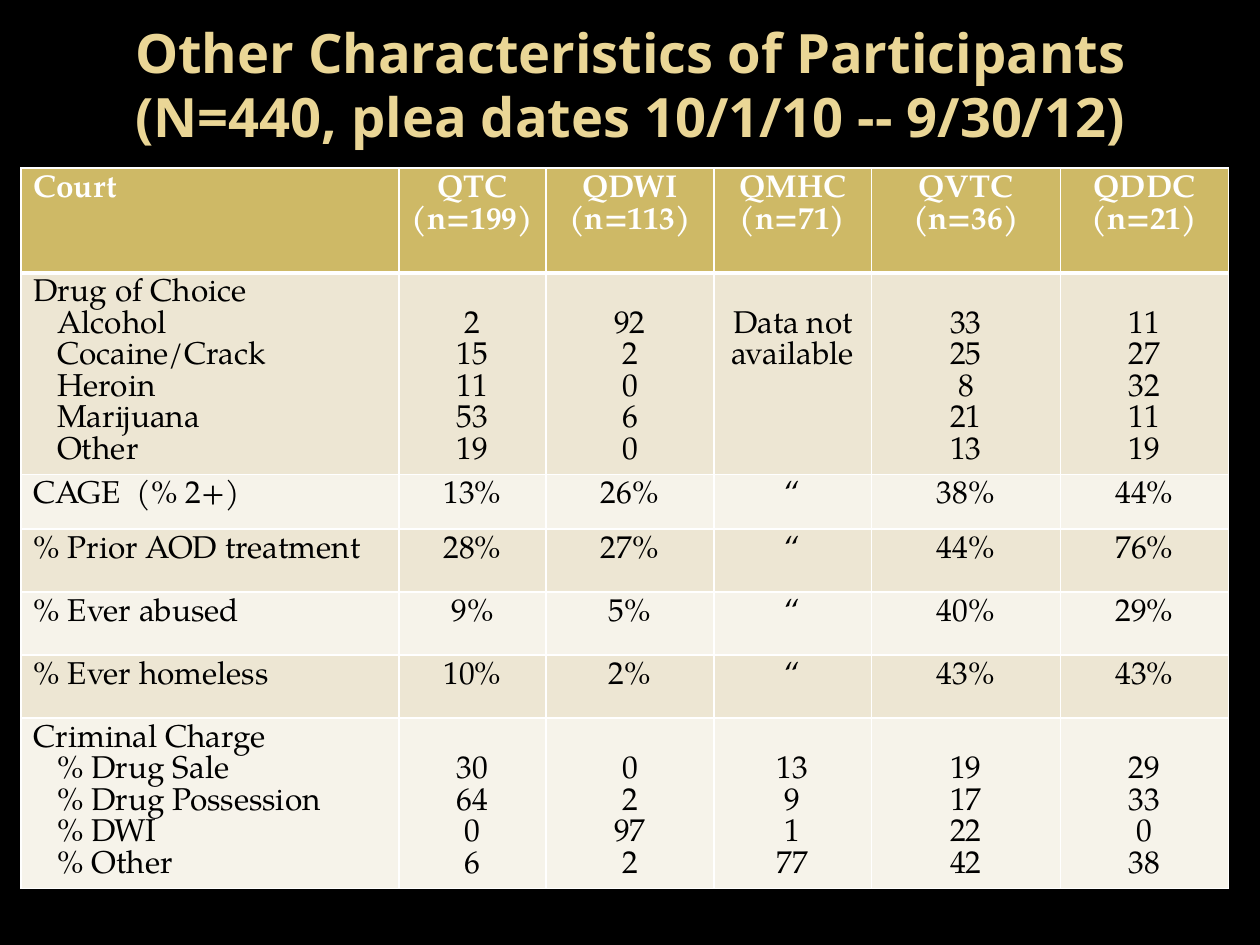
"""Builds a slide with a table of participant characteristics by court."""
import pptx
import pptx.dml.color
import pptx.enum.text
import pptx.oxml
import pptx.oxml.ns
import pptx.util

Pt = pptx.util.Pt
RGBColor = pptx.dml.color.RGBColor
PP_ALIGN = pptx.enum.text.PP_ALIGN

BLACK = RGBColor(0x00, 0x00, 0x00)
WHITE = RGBColor(0xFF, 0xFF, 0xFF)
TITLE_GOLD = RGBColor(0xEA, 0xD6, 0x96)
HEADER_GOLD = RGBColor(0xCE, 0xB9, 0x66)
DARK_BAND = RGBColor(0xED, 0xE6, 0xD3)
LIGHT_BAND = RGBColor(0xF6, 0xF3, 0xEA)

LINE_PITCH = 18
COLUMN_WIDTHS = [216, 84, 96, 90, 108, 96]
ROW_HEIGHTS = [60, 115.2, 31.2, 36, 36, 36, 97.2]
ROWS = [
    ["Court", "QTC\n(n=199)", "QDWI\n(n=113)", "QMHC\n(n=71)", "QVTC\n(n=36)", "QDDC\n(n=21)"],
    ["Drug of Choice\nAlcohol\nCocaine/Crack\nHeroin\nMarijuana\nOther",
     "2\n15\n11\n53\n19", "92\n2\n0\n6\n0", "Data not available",
     "33\n25\n8\n21\n13", "11\n27\n32\n11\n19"],
    ["CAGE  (% 2+)", "13%", "26%", "“", "38%", "44%"],
    ["% Prior AOD treatment", "28%", "27%", "“", "44%", "76%"],
    ["% Ever abused", "9%", "5%", "“", "40%", "29%"],
    ["% Ever homeless", "10%", "2%", "“", "43%", "43%"],
    ["Criminal Charge\n% Drug Sale\n% Drug Possession\n% DWI\n% Other",
     "30\n64\n0\n6", "0\n2\n97\n2", "13\n9\n1\n77", "19\n17\n22\n42", "29\n33\n0\n38"],
]


def add_borders(cell, bottom_width):
    properties = cell._tc.get_or_add_tcPr()
    widths = {"lnL": 1, "lnR": 1, "lnT": 1, "lnB": bottom_width}
    for position, (side, width) in enumerate(widths.items()):
        properties.insert(position, pptx.oxml.parse_xml(
            f'<a:{side} {pptx.oxml.ns.nsdecls("a")} w="{Pt(width)}">'
            f'<a:solidFill><a:srgbClr val="{WHITE}"/></a:solidFill></a:{side}>'))


def style_paragraph(para, font_name, size, color, bold, pitch, align):
    para.font.name = font_name
    para.font.size = Pt(size)
    para.font.bold = bold
    para.font.color.rgb = color
    para.line_spacing = Pt(pitch)
    para.alignment = align


deck = pptx.Presentation()
deck.slide_width = Pt(720)
deck.slide_height = Pt(540)
page = deck.slides.add_slide(deck.slide_layouts[6])
page.background.fill.solid()
page.background.fill.fore_color.rgb = BLACK

title_box = page.shapes.add_textbox(Pt(36), Pt(0), Pt(648), Pt(96))
title_frame = title_box.text_frame
title_frame.word_wrap = True
title_frame.vertical_anchor = pptx.enum.text.MSO_ANCHOR.MIDDLE
title = title_frame.paragraphs[0]
title.text = "Other Characteristics of Participants\v(N=440, plea dates 10/1/10 -- 9/30/12)"
style_paragraph(title, "Open Sans", 31, TITLE_GOLD, True, 37, PP_ALIGN.CENTER)

table = page.shapes.add_table(
    len(ROWS), len(COLUMN_WIDTHS), Pt(12), Pt(96),
    Pt(sum(COLUMN_WIDTHS)), Pt(sum(ROW_HEIGHTS))).table
for column, width in zip(table.columns, COLUMN_WIDTHS):
    column.width = Pt(width)

for row_index, (texts, height) in enumerate(zip(ROWS, ROW_HEIGHTS)):
    table.rows[row_index].height = Pt(height)
    is_header = row_index == 0
    is_group = not is_header and "\n" in texts[0]
    band = HEADER_GOLD if is_header else DARK_BAND if row_index % 2 else LIGHT_BAND
    for column_index, text in enumerate(texts):
        is_label = column_index == 0
        cell = table.cell(row_index, column_index)
        cell.text = text
        cell.fill.solid()
        cell.fill.fore_color.rgb = band
        add_borders(cell, 3 if is_header else 1)
        if is_group and not is_label:
            cell.margin_top = Pt(3.6 + LINE_PITCH)
        for line_index, para in enumerate(cell.text_frame.paragraphs):
            style_paragraph(
                para, "TeX Gyre Pagella", 18, WHITE if is_header else BLACK, is_header,
                LINE_PITCH, PP_ALIGN.LEFT if is_label else PP_ALIGN.CENTER)
            if is_label and line_index > 0:
                para._p.get_or_add_pPr().set("marL", str(Pt(13.5)))

deck.save("out.pptx")
